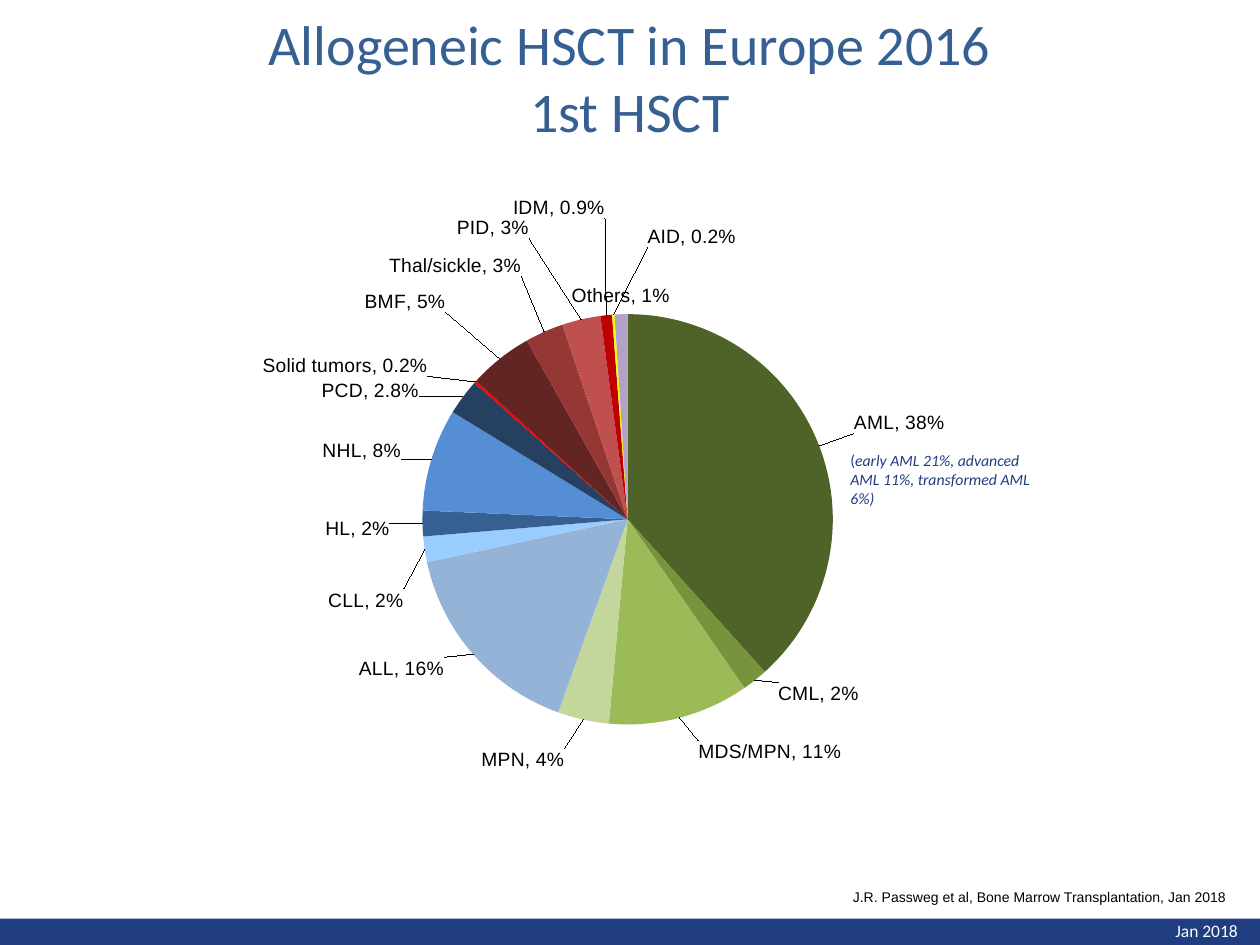
from math import cos, pi, sin

from pptx import Presentation
from pptx.chart.data import CategoryChartData
from pptx.dml.color import RGBColor
from pptx.enum.chart import XL_CHART_TYPE, XL_LABEL_POSITION
from pptx.enum.shapes import MSO_SHAPE
from pptx.enum.text import MSO_ANCHOR, PP_ALIGN
from pptx.oxml import parse_xml
from pptx.oxml.ns import nsdecls
from pptx.util import Inches, Pt

PIE = XL_CHART_TYPE.PIE
OUTER = XL_LABEL_POSITION.OUTSIDE_END
RECT = MSO_SHAPE.RECTANGLE
MIDDLE, TOP = MSO_ANCHOR.MIDDLE, MSO_ANCHOR.TOP
LEFT, CENTER = PP_ALIGN.LEFT, PP_ALIGN.CENTER

# Colours and type sizes
NAVY, BLUE, BLACK, WHITE = (
    RGBColor.from_string(c) for c in ("213D82", "376092", "000000", "FFFFFF"))
THEME = {
    "title": dict(name="Calibri", size=Pt(32), color=BLUE),
    "note": dict(name="Calibri", size=Pt(9), color=NAVY),
    "date": dict(name="Calibri", size=Pt(10), color=WHITE),
    "source": dict(name="Arial", size=Pt(8), color=BLACK),
    "chart": dict(name="Arial", size=Pt(11), color=BLACK),
}

# Name, percent, colour, label anchor on the slide (None: beside the slice)
SLICES = [
    ("AML", 38, "4F6228", (6.73, 3.44)),
    ("CML", 2, "77933C", (6.13, 5.41)),
    ("MDS/MPN", 11, "9BBB59", (5.5, 5.87)),
    ("MPN", 4, "C3D69B", (4.44, 5.93)),
    ("ALL", 16, "95B3D7", (3.49, 5.21)),
    ("CLL", 2, "99CCFF", (3.17, 4.67)),
    ("HL", 2, "376092", (3.06, 4.19)),
    ("NHL", 8, "558ED5", (3.15, 3.66)),
    ("PCD", 2.8, "254061", (3.29, 3.19)),
    ("Solid tumors", 0.2, "FF0000", (3.36, 2.99)),
    ("BMF", 5, "632523", (3.5, 2.48)),
    ("Thal/sickle", 3, "953735", (4.1, 2.2)),
    ("PID", 3, "C0504D", (4.16, 1.9)),
    ("IDM", 0.9, "C00000", (4.76, 1.74)),
    ("AID", 0.2, "FFFF00", (5.45, 1.97)),
    ("Others", 1, "B3A2C7", None),
]
FRAME = (1.3, 0.4, 7.08, 7.09)
PLOT = dict(x=0.29, y=0.21, w=0.46, h=0.63)
HUB = (4.94, 4.12)
REACH = 1.62 + 0.06  # pie radius plus label gap


def layout(target, **sizes):
    """Manual chart layout in fractions of the frame."""
    parts = f'<c:layoutTarget val="{target}"/>' if target else ""
    if target:
        parts += '<c:xMode val="edge"/><c:yMode val="edge"/>'
    parts += "".join(f'<c:{k} val="{v:.4f}"/>' for k, v in sizes.items())
    return f"<c:layout {nsdecls('c')}><c:manualLayout>{parts}</c:manualLayout></c:layout>"


def label(idx, shift, form):
    """Label of one slice, moved away from its usual place."""
    shows = "".join(
        f'<c:show{k} val="{int(k in ("CatName", "Percent"))}"/>'
        for k in ("LegendKey", "Val", "CatName", "SerName", "Percent", "BubbleSize"))
    return parse_xml(
        f'<c:dLbl {nsdecls("c")}><c:idx val="{idx}"/>{layout("", **shift)}'
        f'<c:numFmt formatCode="{form}" sourceLinked="0"/>'
        f'<c:dLblPos val="outEnd"/>{shows}<c:separator>, </c:separator></c:dLbl>')


class Deck:
    def __init__(self, theme):
        self.theme = theme
        self.file = Presentation()
        self.file.slide_width, self.file.slide_height = Inches(10), Inches(7.5)
        self.slide = self.file.slides.add_slide(self.file.slide_layouts[6])

    def style(self, font, kind, **extra):
        for key, value in {**self.theme[kind], **extra}.items():
            if key == "color":
                font.color.rgb = value
            else:
                setattr(font, key, value)

    def bar(self, box, color):
        shape = self.slide.shapes.add_shape(RECT, *map(Inches, box))
        shape.shadow.inherit = False
        shape.fill.solid()
        shape.fill.fore_color.rgb = color
        shape.line.fill.background()

    def text(self, box, runs, kind, wrap=True, align=LEFT, anchor=TOP):
        frame = self.slide.shapes.add_textbox(*map(Inches, box)).text_frame
        frame.word_wrap, frame.vertical_anchor = wrap, anchor
        para = frame.paragraphs[0]
        para.alignment = align
        for words, extra in runs:
            lines = words.split("\n")
            for num, line in enumerate(lines):
                if num:
                    para.add_line_break()
                run = para.add_run()
                run.text = line
                self.style(run.font, kind, **extra)

    def pie(self, box, slices):
        data = CategoryChartData()
        data.categories = [item[0] for item in slices]
        data.add_series("Series 1", [item[1] for item in slices])
        chart = self.slide.shapes.add_chart(PIE, *map(Inches, box), data).chart
        chart.has_legend = chart.has_title = False
        self.style(chart.font, "chart")
        area = chart._chartSpace.xpath("c:chart/c:plotArea")[0]
        for old in area.xpath("c:layout"):
            area.remove(old)
        area.insert(0, parse_xml(layout("inner", **PLOT)))

        # Shared label format
        plot = chart.plots[0]
        plot.vary_by_categories = True
        series = plot.series[0]
        labels = series.data_labels
        formats = dict(show_category_name=True, show_percentage=True,
                       show_value=False, number_format="0%",
                       number_format_is_linked=False, position=OUTER)
        for key, value in formats.items():
            setattr(labels, key, value)
        self.style(labels.font, "chart")
        root = labels._element
        root.xpath("c:showBubbleSize")[0].addnext(
            parse_xml(f"<c:separator {nsdecls('c')}>, </c:separator>"))

        # Slice colours and label shifts
        total, done = sum(item[1] for item in slices), 0
        for idx, (_, value, color, spot) in enumerate(slices):
            form = series.points[idx].format
            form.fill.solid()
            form.fill.fore_color.rgb = RGBColor.from_string(color)
            form.line.fill.background()
            turn = 2 * pi * (done + value / 2) / total
            done += value
            if spot:
                shift = dict(x=(spot[0] - HUB[0] - REACH * sin(turn)) / box[2],
                             y=(spot[1] - HUB[1] + REACH * cos(turn)) / box[3])
                digits = "0%" if value == int(value) else "0.0%"
                root.insert(idx, label(idx, shift, digits))


def main():
    deck = Deck(THEME)
    # Footer
    deck.bar((0, 7.29, 10, 0.21), NAVY)
    deck.text((9.23, 7.25, 0.71, 0.27), [("Jan 2018", {})], "date", wrap=False)
    # Title
    deck.text((0, 0.21, 10, 0.79), [("Allogeneic HSCT in Europe 2016\n1st HSCT", {})],
              "title", align=CENTER, anchor=MIDDLE)
    # Chart with its note
    deck.pie(FRAME, SLICES)
    deck.text((6.65, 3.53, 1.69, 0.6),
              [("(", {}), ("early AML 21%, advanced AML 11%, transformed AML 6%)",
                           {"italic": True})], "note")
    # Source
    deck.text((6.67, 7, 3.21, 0.24),
              [("J.R. Passweg et al, Bone Marrow Transplantation, Jan 2018", {})],
              "source", wrap=False)
    deck.file.save("out.pptx")


if __name__ == "__main__":
    main()
